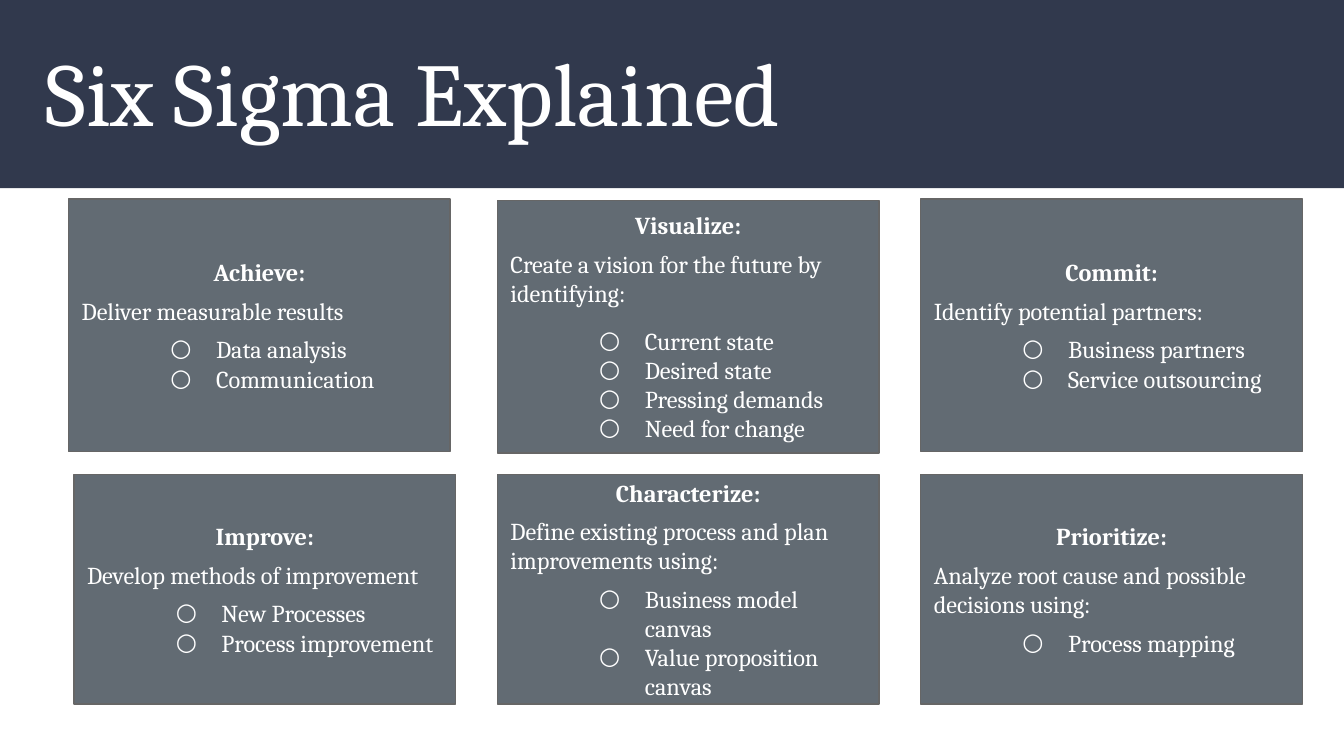
"""Build the Six Sigma Explained slide: a title band above a grid of six cards."""
from dataclasses import dataclass

from lxml import etree
from pptx import Presentation
from pptx.dml.color import RGBColor
from pptx.enum.shapes import MSO_SHAPE
from pptx.enum.text import MSO_ANCHOR, PP_ALIGN
from pptx.oxml.ns import qn
from pptx.util import Inches, Pt

RECTANGLE = MSO_SHAPE.RECTANGLE
MIDDLE = MSO_ANCHOR.MIDDLE
LEFT, CENTER = PP_ALIGN.LEFT, PP_ALIGN.CENTER

TITLE = "Six Sigma Explained"
CARDS = [
    [
        {"heading": "Achieve:", "lead": "Deliver measurable results",
         "items": ["Data analysis", "Communication"], "nudge": (-0.04, 0)},
        {"heading": "Visualize:", "lead": "Create a vision for the future by identifying:",
         "items": ["Current state", "Desired state", "Pressing demands", "Need for change"],
         "nudge": (0, 0.01), "list_gap": 10},
        {"heading": "Commit:", "lead": "Identify potential partners:",
         "items": ["Business partners", "Service outsourcing"]},
    ],
    [
        {"heading": "Improve:", "lead": "Develop methods of improvement",
         "items": ["New Processes", "Process improvement"]},
        {"heading": "Characterize:", "lead": "Define existing process and plan improvements using:",
         "items": ["Business model canvas", "Value proposition canvas"]},
        {"heading": "Prioritize:", "lead": "Analyze root cause and possible decisions using:",
         "items": ["Process mapping"]},
    ],
]

PAGE_WIDTH = 10
PAGE_HEIGHT = PAGE_WIDTH * 9 / 16
GRID_LEFT, COLUMN_PITCH, CARD_WIDTH = 0.55, 3.15, 2.84
ROWS = [(1.48, 1.88), (3.53, 1.71)]
PADDING = 0.1
BULLET_INDENT, BULLET_HANG = 1, 0.34


@dataclass(frozen=True)
class Theme:
    band: str = "31394D"
    card: str = "626B73"
    outline: str = "666666"
    text: str = "FFFFFF"
    font: str = "Cambria"
    title_size: int = 48
    body_size: int = 13


THEME = Theme()


def add_rectangle(page, left, top, width, height, fill):
    box = page.shapes.add_shape(
        RECTANGLE, Inches(left), Inches(top), Inches(width), Inches(height))
    box.shadow.inherit = False
    box.fill.solid()
    box.fill.fore_color.rgb = RGBColor.from_string(fill)
    box.line.fill.background()
    return box


def prepare_frame(box):
    frame = box.text_frame
    frame.word_wrap = True
    frame.vertical_anchor = MIDDLE
    frame.margin_left = frame.margin_right = Inches(PADDING)
    frame.margin_top = frame.margin_bottom = Inches(PADDING)
    return frame


def format_paragraph(para, size, align=LEFT, before=0, bold=False):
    para.alignment = align
    para.space_before = Pt(before)
    for span in para.runs:
        span.font.name = THEME.font
        span.font.size = Pt(size)
        span.font.bold = bold
        span.font.color.rgb = RGBColor.from_string(THEME.text)


def add_bullet(para):
    para.level = 1
    properties = para._p.get_or_add_pPr()
    properties.set("marL", str(Inches(BULLET_INDENT)))
    properties.set("indent", str(-Inches(BULLET_HANG)))
    colour = etree.SubElement(properties, qn("a:buClr"))
    etree.SubElement(colour, qn("a:srgbClr"), val=THEME.text)
    etree.SubElement(properties, qn("a:buFont"), typeface=THEME.font)
    etree.SubElement(properties, qn("a:buChar"), char="○")


def add_card(page, card, left, top, height):
    box = add_rectangle(page, left, top, CARD_WIDTH, height, THEME.card)
    box.line.color.rgb = RGBColor.from_string(THEME.outline)
    box.line.width = Pt(0.75)
    frame = prepare_frame(box)
    frame.text = "\n".join([card["heading"], card["lead"], *card["items"]])
    heading, lead, *items = frame.paragraphs
    format_paragraph(heading, THEME.body_size, CENTER, before=6, bold=True)
    format_paragraph(lead, THEME.body_size, before=5)
    for index, item in enumerate(items):
        gap = card.get("list_gap", 5) if index == 0 else 0
        format_paragraph(item, THEME.body_size, before=gap)
        add_bullet(item)


def main():
    deck = Presentation()
    deck.slide_width, deck.slide_height = Inches(PAGE_WIDTH), Inches(PAGE_HEIGHT)
    page = deck.slides.add_slide(deck.slide_layouts[6])

    add_rectangle(page, 0, 0, PAGE_WIDTH, 1.4, THEME.band)
    for (top, height), cards in zip(ROWS, CARDS):
        for column, card in enumerate(cards):
            shift_x, shift_y = card.get("nudge", (0, 0))
            left = GRID_LEFT + column * COLUMN_PITCH + shift_x
            add_card(page, card, left, top + shift_y, height)

    title = page.shapes.add_textbox(Inches(0.24), Inches(0.22), Inches(9.29), Inches(0.91))
    frame = prepare_frame(title)
    frame.text = TITLE
    format_paragraph(frame.paragraphs[0], THEME.title_size)

    deck.save("out.pptx")


if __name__ == "__main__":
    main()
